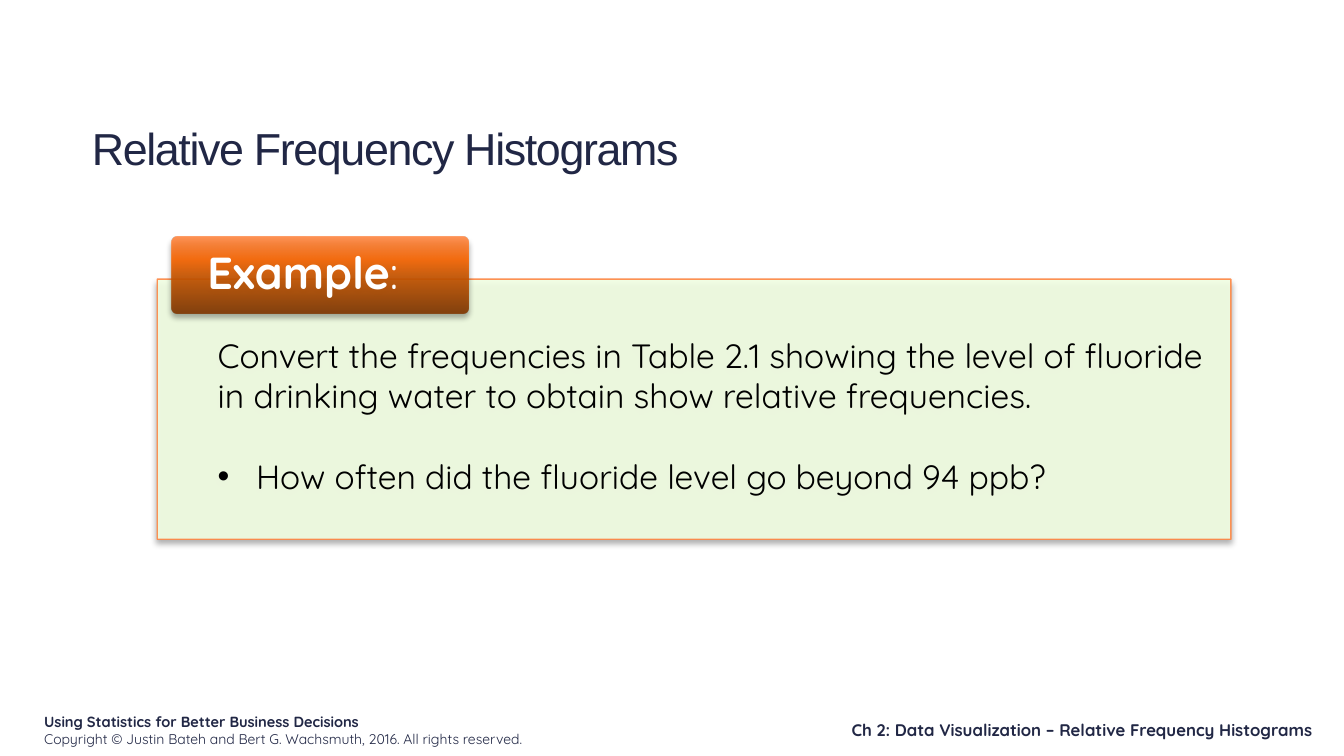
"""Build the Relative Frequency Histograms example slide."""
import pptx
import pptx.util
import pptx.dml.color
import pptx.enum.shapes
import pptx.enum.text
import pptx.oxml
import pptx.oxml.ns

WIDTH, HEIGHT = 13.33, 7.5
COLORS = {"navy": "212745", "black": "000000", "white": "FFFFFF",
          "mint": "F2FFE3", "orange": "FF8643"}
TAB_GRADIENT = [(0, "7E3600"), (50, "CC5700"), (70, "F96500"), (100, "FF8947")]

TITLE = "Relative Frequency Histograms"
TASK = ("Convert the frequencies in Table 2.1 showing the level of fluoride "
        "in drinking water to obtain show relative frequencies.")
QUESTION = "How often did the fluoride level go beyond 94 ppb?"
BOOK = "Using Statistics for Better Business Decisions"
COPYRIGHT = ("Copyright © Justin Bateh and Bert G. Wachsmuth, 2016. "
             "All rights reserved.")
CHAPTER = "Ch 2: Data Visualization – Relative Frequency Histograms"

PERCENT_BOXES = {
    "title": (6.08, 15.33, 89.72, 13.07),
    "panel": (11.7, 36.93, 79.89, 34.4),
    "tab": (12.75, 31.33, 22.13, 10.13),
    "book": (2.55, 93.6, 39.61, 5.33),
    "chapter": (48.76, 94.53, 49.66, 4),
}
INSETS = {"panel": (0.6, 0.55, 0.2, 0.22), "tab": (0.34, 0.04, 0.34, 0.04)}

Inches, Pt = pptx.util.Inches, pptx.util.Pt
Anchor, Align = pptx.enum.text.MSO_ANCHOR, pptx.enum.text.PP_ALIGN
Preset = pptx.enum.shapes.MSO_SHAPE
NAMESPACE = pptx.oxml.ns.nsdecls("a")


def place(name):
    return [Inches(share / 100 * side) for share, side
            in zip(PERCENT_BOXES[name], (WIDTH, HEIGHT) * 2)]


def rgb(name):
    return pptx.dml.color.RGBColor.from_string(COLORS[name])


def add_run(paragraph, text, size, color, bold=False, face="Quicksand"):
    run = paragraph.add_run()
    run.text = text
    run.font.size, run.font.bold, run.font.name = Pt(size), bold, face
    run.font.color.rgb = rgb(color)
    return run


def prepare_frame(shape, anchor, insets=(0.1, 0.05, 0.1, 0.05)):
    frame = shape.text_frame
    frame.word_wrap = True
    frame.auto_size = pptx.enum.text.MSO_AUTO_SIZE.NONE
    frame.vertical_anchor = anchor
    (frame.margin_left, frame.margin_top,
     frame.margin_right, frame.margin_bottom) = map(Inches, insets)
    frame.paragraphs[0].alignment = Align.LEFT
    return frame


def add_card(slide, name, preset, anchor):
    card = slide.shapes.add_shape(preset, *place(name))
    card.shadow.inherit = False
    return card, prepare_frame(card, anchor, INSETS[name])


def add_glow(card):
    properties = card._element.spPr
    for color in properties.iter(pptx.oxml.ns.qn("a:srgbClr")):
        color.append(pptx.oxml.parse_xml(f'<a:alpha {NAMESPACE} val="90000"/>'))
    properties.find(pptx.oxml.ns.qn("a:effectLst")).append(pptx.oxml.parse_xml(
        f'<a:outerShdw {NAMESPACE} blurRad="{Pt(4)}" dist="{Pt(3)}" '
        'dir="5400000" rotWithShape="0"><a:srgbClr val="000000">'
        '<a:alpha val="35000"/></a:srgbClr></a:outerShdw>'))


def add_title(slide):
    title = slide.shapes.title
    title.left, title.top, title.width, title.height = place("title")
    heading = prepare_frame(title, Anchor.TOP).paragraphs[0]
    run = add_run(heading, TITLE, 32, "navy", face="Arial")
    run.font._element.set("spc", "-100")


def add_panel(slide):
    panel, frame = add_card(slide, "panel", Preset.RECTANGLE, Anchor.TOP)
    panel.fill.solid()
    panel.fill.fore_color.rgb = rgb("mint")
    panel.line.color.rgb = rgb("orange")
    panel.line.width = Pt(1)
    add_glow(panel)
    add_run(frame.paragraphs[0], TASK, 24, "black")
    question = frame.add_paragraph()
    question.alignment = Align.LEFT
    question.space_before = Pt(29)
    add_run(question, QUESTION, 24, "black")
    settings = question._p.get_or_add_pPr()
    settings.set("marL", str(Inches(0.38)))
    settings.set("indent", str(Inches(-0.38)))
    for bullet in ('buFont {} typeface="Arial"', 'buChar {} char="•"'):
        settings.append(pptx.oxml.parse_xml(f"<a:{bullet.format(NAMESPACE)}/>"))


def add_tab(slide):
    tab, frame = add_card(slide, "tab", Preset.ROUNDED_RECTANGLE, Anchor.MIDDLE)
    tab.adjustments[0] = 0.08
    tab.line.fill.background()
    stops = "".join(f'<a:gs pos="{position * 1000}"><a:srgbClr val="{color}"/></a:gs>'
                    for position, color in TAB_GRADIENT)
    gradient = pptx.oxml.parse_xml(
        f'<a:gradFill {NAMESPACE} rotWithShape="1"><a:gsLst>{stops}</a:gsLst>'
        '<a:lin ang="16200000" scaled="0"/></a:gradFill>')
    tab._element.spPr.find(pptx.oxml.ns.qn("a:prstGeom")).addnext(gradient)
    add_glow(tab)
    label = frame.paragraphs[0]
    label.line_spacing = 0.9
    add_run(label, "Example", 32, "white", bold=True)
    add_run(label, ":", 32, "white")


def add_footers(slide):
    book = prepare_frame(slide.shapes.add_textbox(*place("book")), Anchor.TOP)
    add_run(book.paragraphs[0], BOOK, 10.5, "navy", bold=True)
    rights = book.add_paragraph()
    rights.space_after = Pt(1)
    add_run(rights, COPYRIGHT, 10, "navy")
    chapter = prepare_frame(slide.shapes.add_textbox(*place("chapter")), Anchor.BOTTOM)
    chapter.paragraphs[0].alignment = Align.RIGHT
    add_run(chapter.paragraphs[0], CHAPTER, 12, "navy", bold=True)


def main():
    deck = pptx.Presentation()
    deck.slide_width, deck.slide_height = Inches(WIDTH), Inches(HEIGHT)
    slide = deck.slides.add_slide(deck.slide_layouts.get_by_name("Title Only"))
    add_title(slide)
    add_panel(slide)
    add_tab(slide)
    add_footers(slide)
    deck.save("out.pptx")


if __name__ == "__main__":
    main()
